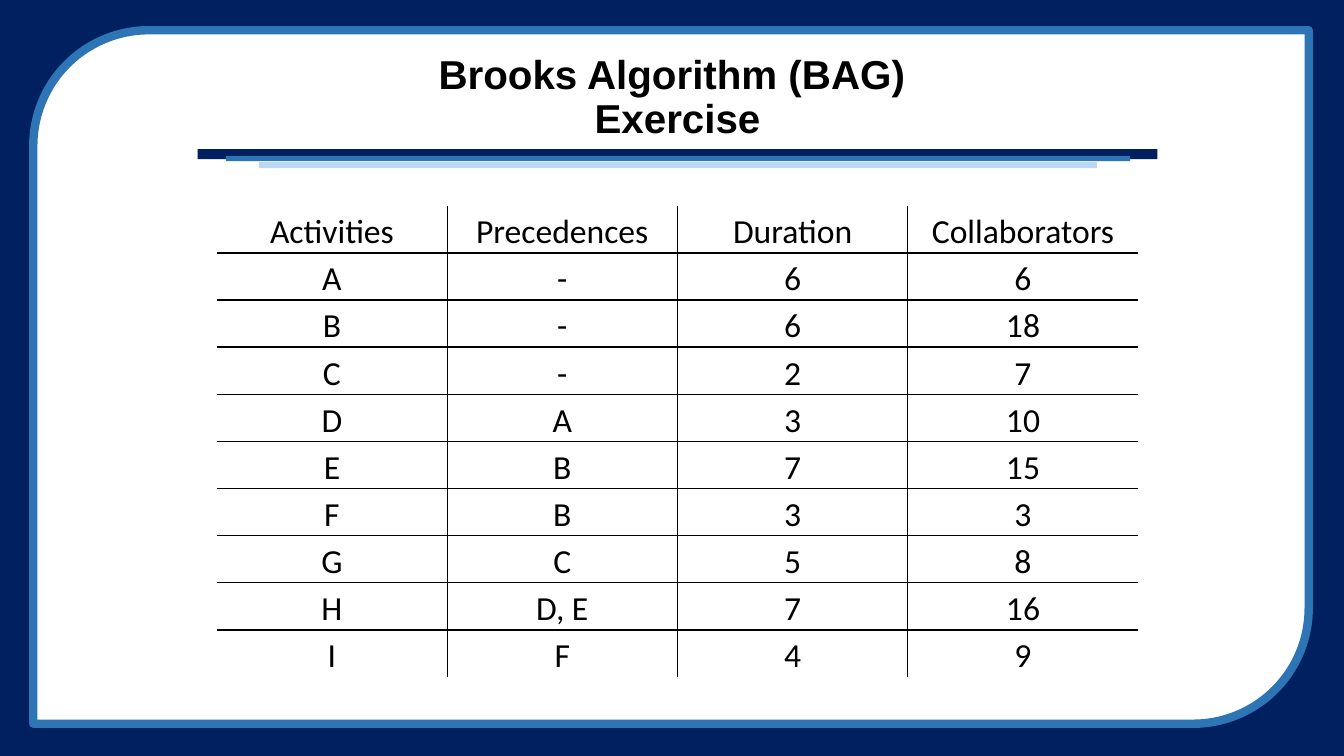
from lxml import etree
from pptx import Presentation
from pptx.dml.color import RGBColor
from pptx.enum import shapes, text
from pptx.oxml.ns import qn
from pptx.util import Inches, Pt

# Content
TITLE = "Brooks Algorithm (BAG) \vExercise"
ROWS = [
    ("Activities", "Precedences", "Duration", "Collaborators"),
    ("A", "-", "6", "6"),
    ("B", "-", "6", "18"),
    ("C", "-", "2", "7"),
    ("D", "A", "3", "10"),
    ("E", "B", "7", "15"),
    ("F", "B", "3", "3"),
    ("G", "C", "5", "8"),
    ("H", "D, E", "7", "16"),
    ("I", "F", "4", "9"),
]

NAVY = RGBColor(0x00, 0x20, 0x60)
BLUE = RGBColor(0x2E, 0x75, 0xB6)
PALE = RGBColor(0xBD, 0xD7, 0xEE)
WHITE = RGBColor(0xFF, 0xFF, 0xFF)
BLACK = RGBColor(0x00, 0x00, 0x00)

# Bars under the title: left, top, width, height, colour
BARS = [
    (1.96, 1.48, 9.52, 0.1, NAVY),
    (2.24, 1.55, 8.97, 0.05, BLUE),
    (2.57, 1.61, 8.31, 0.06, PALE),
]
COL_W, ROW_H = 2.285, 0.42
RECT = shapes.MSO_SHAPE.RECTANGLE
PANEL = shapes.MSO_SHAPE.ROUND_2_DIAG_RECTANGLE


def add_block(s, kind, left, top, width, height, fill):
    sp = s.shapes.add_shape(kind, Inches(left), Inches(top), Inches(width), Inches(height))
    sp.shadow.inherit = False
    sp.fill.solid()
    sp.fill.fore_color.rgb = fill
    sp.line.fill.background()
    return sp


def set_borders(cell, widths):
    """Widths in points for left, right, top, bottom; 0 hides the edge."""
    tc_pr = cell._tc.get_or_add_tcPr()
    for i, (side, width) in enumerate(zip("LRTB", widths)):
        ln = etree.Element(qn(f"a:ln{side}"), w=str(Pt(width)))
        if width:
            fill = etree.SubElement(ln, qn("a:solidFill"))
            etree.SubElement(fill, qn("a:srgbClr"), val=str(BLACK))
        else:
            etree.SubElement(ln, qn("a:noFill"))
        tc_pr.insert(i, ln)


def style_text(p, font, size, spacing, bold):
    p.alignment = text.PP_ALIGN.CENTER
    p.line_spacing = spacing
    for r in p.runs:
        r.font.name = font
        r.font.size = Pt(size)
        r.font.bold = bold
        r.font.color.rgb = BLACK


prs = Presentation()
prs.slide_width, prs.slide_height = Inches(13.33), Inches(7.5)
s = prs.slides.add_slide(prs.slide_layouts[5])

# Frame and title bars
add_block(s, RECT, 0, 0, 13.33, 7.5, NAVY)
panel = add_block(s, PANEL, 0.33, 0.3, 12.65, 6.88, WHITE)
panel.line.color.rgb = BLUE
panel.line.width = Pt(6)
for bar in BARS:
    add_block(s, RECT, *bar)

# Title, brought in front of the frame
title = s.shapes.title
title.element.getparent().append(title.element)
title.left, title.top = Inches(1.96), Inches(0.49)
title.width, title.height = Inches(9.52), Inches(0.97)
tf = title.text_frame
tf.text = TITLE
tf.word_wrap = True
tf.auto_size = text.MSO_AUTO_SIZE.NONE
tf.vertical_anchor = text.MSO_ANCHOR.MIDDLE
style_text(tf.paragraphs[0], "Arial", 28.8, 0.9, True)

# Activity table with inner rules only
n_rows, n_cols = len(ROWS), len(ROWS[0])
table = s.shapes.add_table(n_rows, n_cols, Inches(2.15), Inches(2.04),
                           Inches(COL_W * n_cols), Inches(ROW_H * n_rows)).table
table.first_row = table.horz_banding = False
for i, row in enumerate(ROWS):
    for j, value in enumerate(row):
        cell = table.cell(i, j)
        cell.text = value
        cell.fill.background()
        cell.margin_left = cell.margin_right = Inches(0.07)
        cell.margin_top = cell.margin_bottom = 0
        style_text(cell.text_frame.paragraphs[0], "Calibri", 24, 1.15, False)
        left = 1 if j else 0
        right = 1 if j < n_cols - 1 else 0
        top = (0, 1.5)[i] if i < 2 else 1
        bottom = 1.5 if i == 0 else 1 if i < n_rows - 1 else 0
        set_borders(cell, (left, right, top, bottom))

prs.save("out.pptx")
